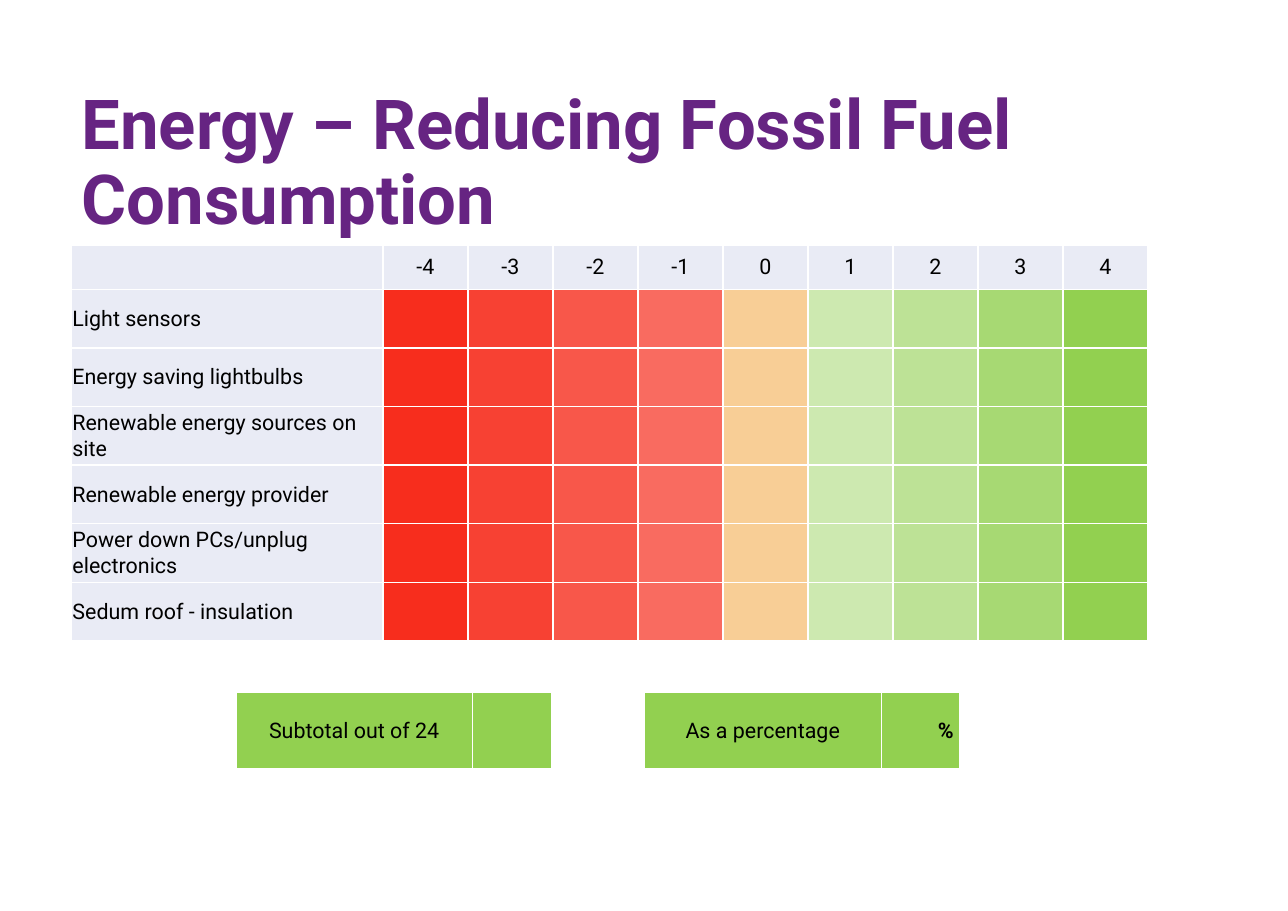
import pptx
import pptx.dml.color
import pptx.enum.text
import pptx.util
from lxml import etree

Cm = pptx.util.Cm
ALIGN = pptx.enum.text.PP_ALIGN
ANCHOR = pptx.enum.text.MSO_ANCHOR
DRAWING_NS = "http://schemas.openxmlformats.org/drawingml/2006/main"

RED, AMBER, GREEN, PALE = "F72D1D", "F29E2E", "92D050", "E9EBF5"
# Fill and opacity in percent for each score
SCORES = {
    "-4": (RED, 100), "-3": (RED, 90), "-2": (RED, 80), "-1": (RED, 70),
    "0": (AMBER, 50),
    "1": (GREEN, 45), "2": (GREEN, 60), "3": (GREEN, 80), "4": (GREEN, 100),
}
MEASURES = [
    "Light sensors",
    "Energy saving lightbulbs",
    "Renewable energy sources on site",
    "Renewable energy provider",
    "Power down PCs/unplug electronics",
    "Sedum roof - insulation",
]


def rgb(value):
    return pptx.dml.color.RGBColor.from_string(value)


def add_child(parent, tag, **attributes):
    return etree.SubElement(parent, f"{{{DRAWING_NS}}}{tag}", attributes)


def write(frame, text, size=14, color="000000", bold=False, align=ALIGN.LEFT,
          line_spacing=None):
    frame.text = text
    paragraph = frame.paragraphs[0]
    paragraph.alignment = align
    paragraph.line_spacing = line_spacing
    font = paragraph.runs[0].font
    font.name, font.size, font.bold = "Roboto", pptx.util.Pt(size), bold
    font.color.rgb = rgb(color)


def style_cell(cell, fill, opacity=100):
    """Give a cell white 1 pt borders, narrow margins and a fill."""
    properties = cell._tc.get_or_add_tcPr()
    for side in ("lnL", "lnR", "lnT", "lnB"):
        border = add_child(properties, side, w="12700")
        add_child(add_child(border, "solidFill"), "srgbClr", val="FFFFFF")
    cell.fill.solid()
    cell.fill.fore_color.rgb = rgb(fill)
    if opacity < 100:
        color = properties.find(f"{{{DRAWING_NS}}}solidFill/{{{DRAWING_NS}}}srgbClr")
        add_child(color, "alpha", val=str(opacity * 1000))
    cell.margin_left = cell.margin_right = cell.margin_top = Cm(0.02)
    cell.margin_bottom = 0
    cell.vertical_anchor = ANCHOR.MIDDLE


def add_plain_table(slide, left, top, widths, heights):
    table = slide.shapes.add_table(
        len(heights), len(widths), Cm(left), Cm(top),
        Cm(sum(widths)), Cm(sum(heights))).table
    table.first_row = table.horz_banding = False
    for column, width in zip(table.columns, widths):
        column.width = Cm(width)
    for row, height in zip(table.rows, heights):
        row.height = Cm(height)
    return table


def add_title(slide, text):
    title = slide.shapes.title
    title.left, title.top, title.width, title.height = (
        Cm(1.63), Cm(3.3), Cm(25.25), Cm(2.34))
    frame = title.text_frame
    frame.word_wrap = True
    frame.auto_size = pptx.enum.text.MSO_AUTO_SIZE.NONE
    frame.vertical_anchor = ANCHOR.BOTTOM
    write(frame, text, size=45, color="662482", bold=True, line_spacing=0.9)


def add_score_grid(slide):
    last = len(SCORES) + 1
    grid = add_plain_table(slide, 1.65, 5.65, [7.18] + [1.96] * last,
                           [1.02] + [1.35] * len(MEASURES))
    # White column to the right of the scores
    grid.cell(0, last).merge(grid.cell(len(MEASURES), last))
    style_cell(grid.cell(0, last), "FFFFFF")

    # Header row
    style_cell(grid.cell(0, 0), PALE)
    for column, score in enumerate(SCORES, start=1):
        style_cell(grid.cell(0, column), PALE)
        write(grid.cell(0, column).text_frame, score, align=ALIGN.CENTER)

    # One row per measure
    for row, measure in enumerate(MEASURES, start=1):
        style_cell(grid.cell(row, 0), PALE)
        write(grid.cell(row, 0).text_frame, measure)
        for column, (color, opacity) in enumerate(SCORES.values(), start=1):
            style_cell(grid.cell(row, column), color, opacity)


def add_result(slide, left, label, unit=""):
    result = add_plain_table(slide, left, 15.97, [1.82] * 4, [1.75])
    result.cell(0, 0).merge(result.cell(0, 2))
    label_cell, value_cell = result.cell(0, 0), result.cell(0, 3)
    for cell in (label_cell, value_cell):
        style_cell(cell, GREEN)
    write(label_cell.text_frame, label, align=ALIGN.CENTER)
    if unit:
        value_cell.margin_right = Cm(0.15)
        write(value_cell.text_frame, unit, bold=True, align=ALIGN.RIGHT)


def main():
    presentation = pptx.Presentation()
    presentation.slide_width, presentation.slide_height = Cm(29.7), Cm(21)
    slide = presentation.slides.add_slide(presentation.slide_layouts[5])
    add_score_grid(slide)
    add_title(slide, "Energy – Reducing Fossil Fuel Consumption")
    add_result(slide, 5.44, "Subtotal out of 24")
    add_result(slide, 14.86, "As a percentage", unit="%")
    presentation.save("out.pptx")


if __name__ == "__main__":
    main()
